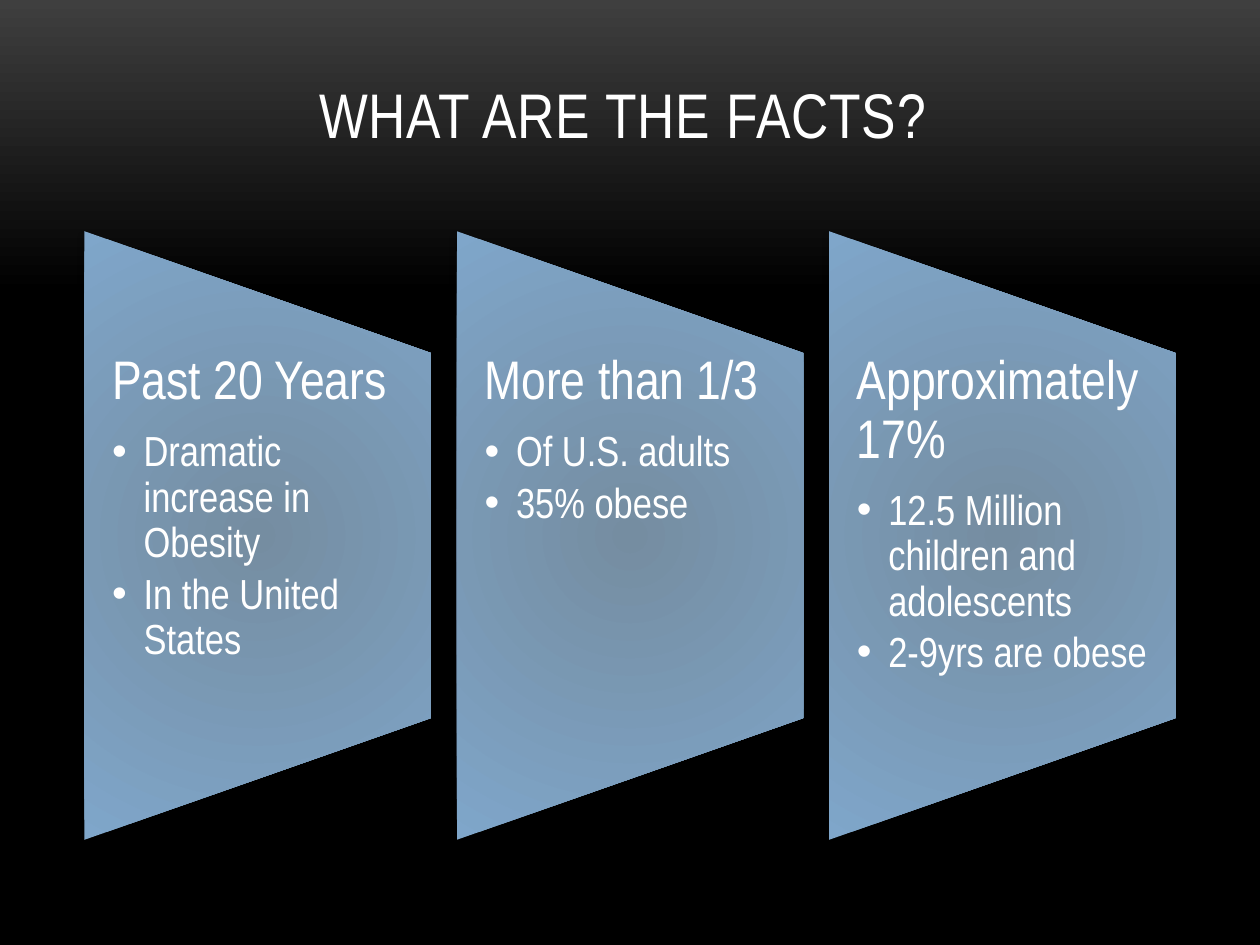
from lxml.etree import SubElement
from pptx import Presentation
from pptx.dml.color import RGBColor
from pptx.enum.shapes import MSO_SHAPE
from pptx.enum.text import MSO_ANCHOR, PP_ALIGN
from pptx.oxml.ns import qn
from pptx.util import Inches, Pt

FONT = "Arial Narrow"
WHITE = RGBColor(0xFF, 0xFF, 0xFF)
BLACK = RGBColor(0x00, 0x00, 0x00)
CHARCOAL = RGBColor(0x3F, 0x3F, 0x3F)
PANEL_CENTRE = RGBColor(0x75, 0x8D, 0xA1)
PANEL_EDGE = RGBColor(0x7F, 0xA6, 0xCA)

# Panel grid, in inches
AREA_LEFT, AREA_RIGHT = 0.67, 9.33
PANEL_WIDTH, PANEL_HEIGHT = 2.75, 4.83
PANEL_MIDDLE = 4.25
TEXT_HEIGHT = 2.9

FACTS = [
    ("Past 20 Years", ["Dramatic increase in Obesity", "In the United States"]),
    ("More than 1/3", ["Of U.S. adults", "35% obese"]),
    ("Approximately 17%", ["12.5 Million children and adolescents", "2-9yrs are obese"]),
]


def set_gradient(fill, element, stops, circular=False):
    """Fill with (percent, colour) stops, top to bottom or circular."""
    fill.gradient()
    gradient = next(element.iter(qn("a:gradFill")))
    for child in list(gradient):
        gradient.remove(child)
    stop_list = SubElement(gradient, qn("a:gsLst"))
    for percent, colour in stops:
        stop = SubElement(stop_list, qn("a:gs"), pos=str(percent * 1000))
        SubElement(stop, qn("a:srgbClr"), val=str(colour))
    if circular:
        route = SubElement(gradient, qn("a:path"), path="circle")
        SubElement(route, qn("a:fillToRect"), l="100000", t="100000", r="100000", b="100000")
    else:
        SubElement(gradient, qn("a:lin"), ang="5400000", scaled="0")


def add_shadow(shape):
    shape.shadow.inherit = False
    effects = shape.element.spPr.find(qn("a:effectLst"))
    shadow = SubElement(effects, qn("a:outerShdw"), blurRad=str(Pt(4)), dist=str(Pt(3.4)),
                        dir="5400000", rotWithShape="0")
    colour = SubElement(shadow, qn("a:srgbClr"), val=str(BLACK))
    SubElement(colour, qn("a:alpha"), val="40000")


def set_font(paragraph, size):
    paragraph.font.name = FONT
    paragraph.font.size = Pt(size)
    paragraph.font.color.rgb = WHITE


def add_title(page, text):
    title = page.shapes.title
    title.left, title.top = Inches(0.67), Inches(0.33)
    title.width, title.height = Inches(8.67), Inches(0.92)
    title.text_frame.vertical_anchor = MSO_ANCHOR.BOTTOM
    paragraph = title.text_frame.paragraphs[0]
    paragraph.alignment = PP_ALIGN.CENTER
    span = paragraph.add_run()
    span.text = text
    span.font._element.set("spc", "50")
    set_font(paragraph, 36)


def add_panel(page, left):
    """Trapezoid turned so that its wide side faces left."""
    centre = left + PANEL_WIDTH / 2
    panel = page.shapes.add_shape(
        MSO_SHAPE.FLOWCHART_MANUAL_OPERATION,
        Inches(centre - PANEL_HEIGHT / 2), Inches(PANEL_MIDDLE - PANEL_WIDTH / 2),
        Inches(PANEL_HEIGHT), Inches(PANEL_WIDTH))
    panel.rotation = 270
    set_gradient(panel.fill, panel.element, [(0, PANEL_CENTRE), (100, PANEL_EDGE)], circular=True)
    panel.line.fill.background()
    add_shadow(panel)


def add_bullet(paragraph):
    paragraph.level = 1
    properties = paragraph._p.get_or_add_pPr()
    properties.set("marL", str(Inches(0.25)))
    properties.set("indent", str(Inches(-0.25)))
    SubElement(properties, qn("a:buFont"), typeface="Arial")
    SubElement(properties, qn("a:buChar"), char="•")


def add_fact_text(page, left, heading, points):
    box = page.shapes.add_textbox(Inches(left), Inches(PANEL_MIDDLE - TEXT_HEIGHT / 2),
                                  Inches(PANEL_WIDTH), Inches(TEXT_HEIGHT))
    frame = box.text_frame
    frame.word_wrap = True
    frame.margin_left = frame.margin_right = Inches(0.22)
    frame.margin_top = frame.margin_bottom = 0

    first = frame.paragraphs[0]
    first.text = heading
    first.line_spacing = 0.9
    first.space_after = Pt(10.85)
    set_font(first, 31)
    for point in points:
        paragraph = frame.add_paragraph()
        paragraph.text = point
        add_bullet(paragraph)
        paragraph.line_spacing = 0.9
        paragraph.space_after = Pt(3.6)
        set_font(paragraph, 24)


def main():
    deck = Presentation()
    deck.slide_width, deck.slide_height = Inches(10), Inches(7.5)
    page = deck.slides.add_slide(deck.slide_layouts[5])

    # Background and title
    set_gradient(page.background.fill, page.element,
                 [(0, CHARCOAL), (31, BLACK), (100, BLACK)])
    add_title(page, "WHAT ARE THE FACTS? ")

    # Three evenly spaced fact panels
    step = (AREA_RIGHT - AREA_LEFT - PANEL_WIDTH) / (len(FACTS) - 1)
    for index, (heading, points) in enumerate(FACTS):
        left = AREA_LEFT + index * step
        add_panel(page, left)
        add_fact_text(page, left, heading, points)

    deck.save("out.pptx")


if __name__ == "__main__":
    main()
